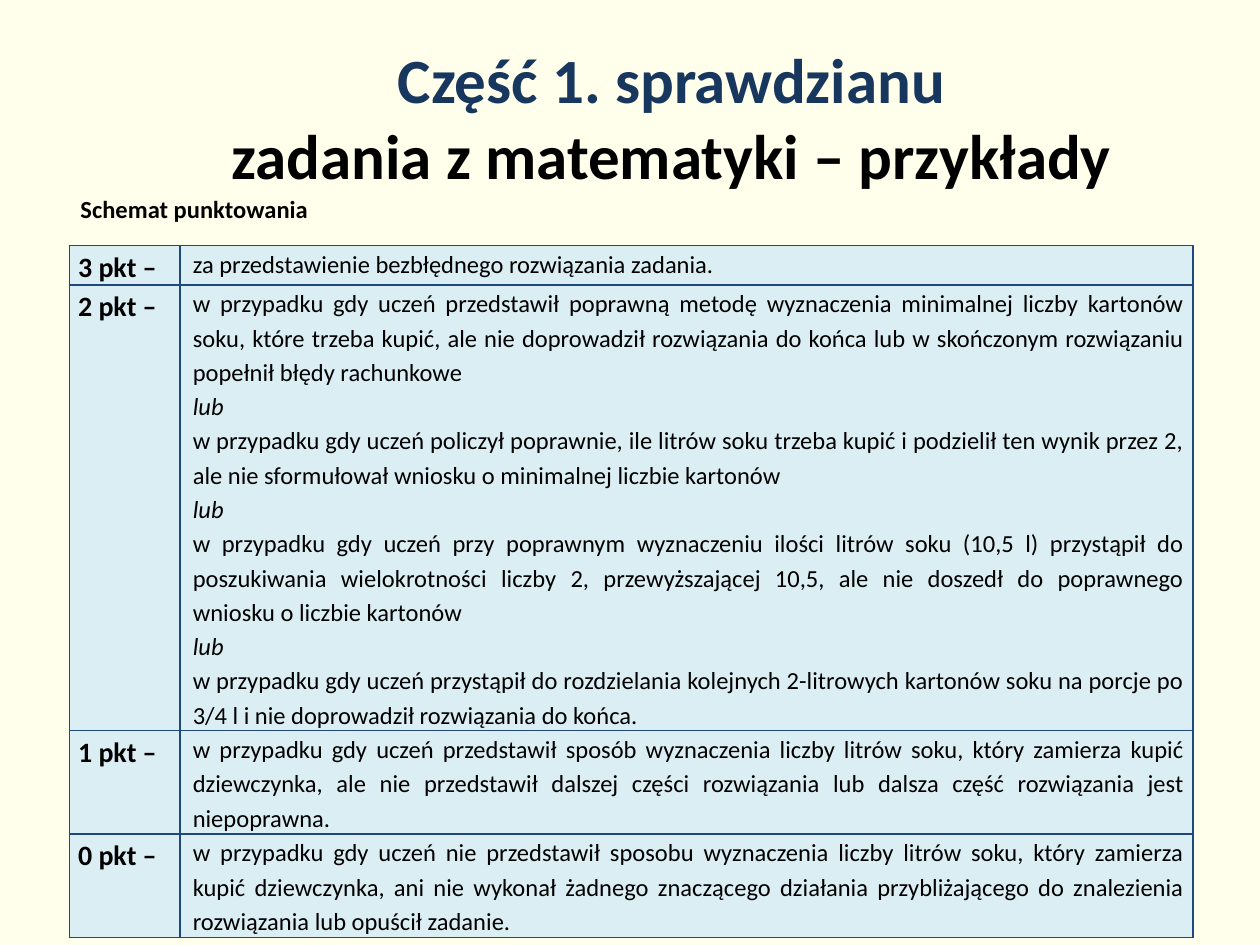
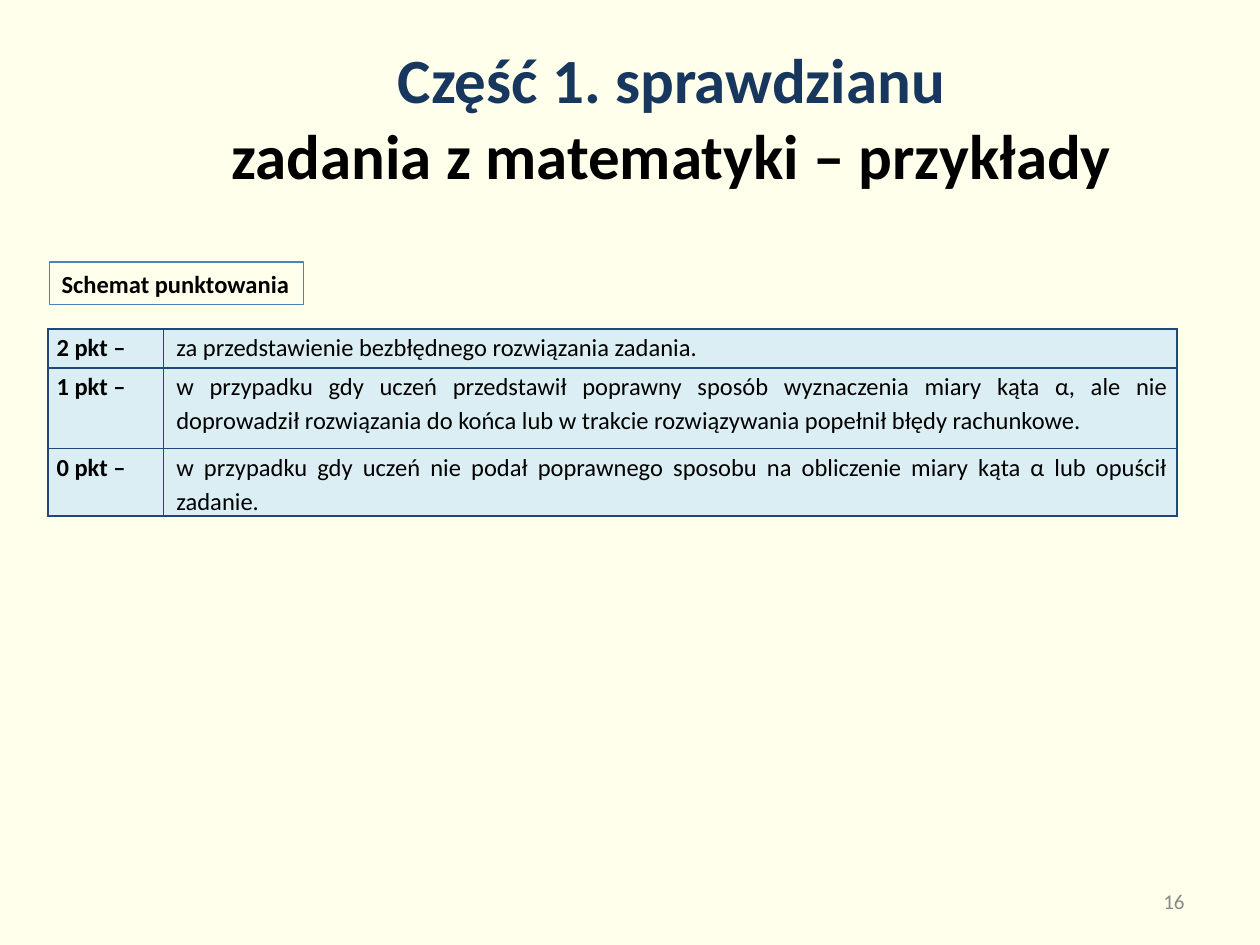
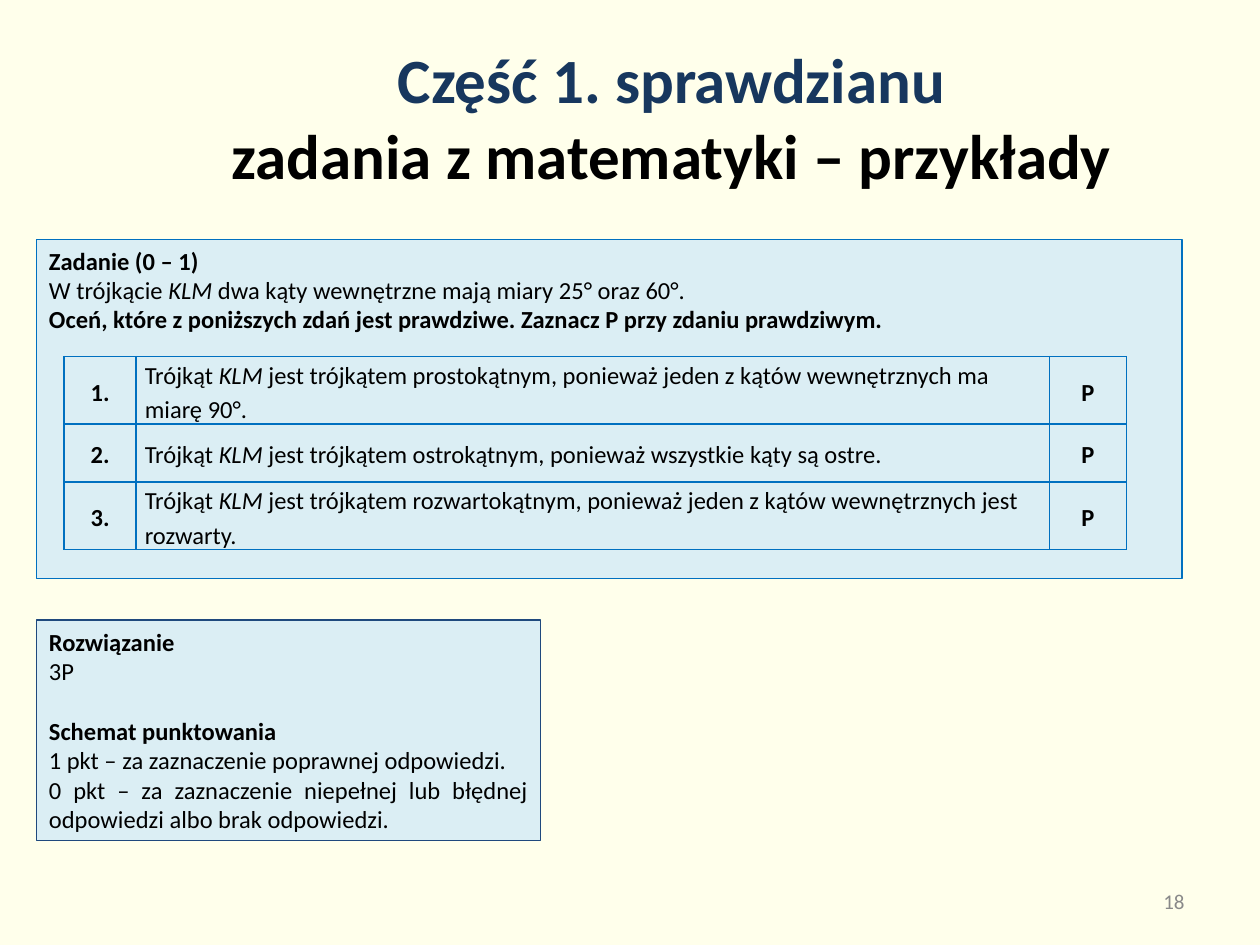
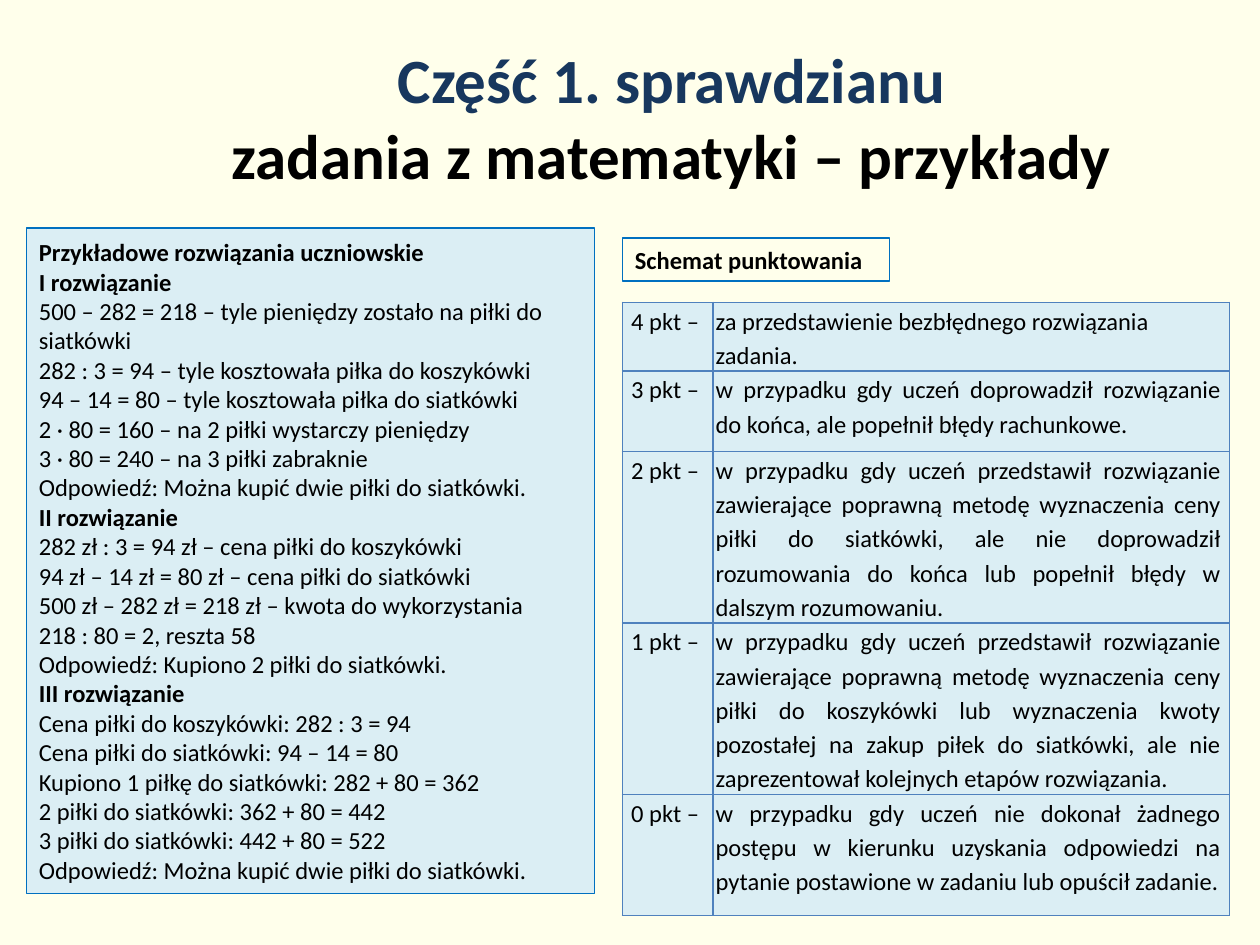
from lxml import etree
from pptx import Presentation
from pptx import util as u
from pptx.dml.color import RGBColor
from pptx.enum import shapes, text
from pptx.oxml import ns

COLORS = {
    "cream": "FFFFEB",
    "ice": "DBEEF4",
    "title": "17375E",
    "ink": "000000",
    "gray": "898989",
    "navy": "1F497D",
    "blue": "0070C0",
    "steel": "4F81BD",
}
FONT = "Calibri"
BODY_SIZE = 14
ALIGN = text.PP_ALIGN
ANCHOR = text.MSO_ANCHOR
TITLE_BOX = (1.23, 0.3, 8.2, 1.25)
NUMBER_BOX = (7.17, 6.95, 2.33, 0.4)
SCORING = "*Schemat punktowania"


def rgb(name):
    """Return a palette colour."""
    return RGBColor.from_string(COLORS[name])


def apply(target, values):
    """Set every attribute in a dict of format values."""
    for name, value in values.items():
        setattr(target, name, value)


def place(shape, box):
    """Move and size a shape to a box in inches."""
    apply(shape, dict(zip(("left", "top", "width", "height"), map(u.Inches, box))))


def add_run(paragraph, words, size=BODY_SIZE, color="ink", bold=False, italic=False):
    """Add one formatted run."""
    run = paragraph.add_run()
    run.text = words
    apply(run.font, {"name": FONT, "size": u.Pt(size), "bold": bold, "italic": italic})
    run.font.color.rgb = rgb(color)


def write(frame, lines, paragraph_format, size=BODY_SIZE, color="ink"):
    """Write lines; a leading * means bold and _words_ are italic."""
    for index, line in enumerate(lines):
        paragraph = frame.add_paragraph() if index else frame.paragraphs[0]
        apply(paragraph, paragraph_format)
        for position, words in enumerate(line.removeprefix("*").split("_")):
            if words:
                add_run(paragraph, words, size, color, line.startswith("*"), position % 2 == 1)


def add_titled_slide(presentation):
    """Add a slide with the shared two-line title."""
    slide = presentation.slides.add_slide(presentation.slide_layouts[5])
    title = slide.shapes.title
    place(title, TITLE_BOX)
    apply(title.text_frame, {
        "auto_size": text.MSO_AUTO_SIZE.NONE,
        "vertical_anchor": ANCHOR.MIDDLE,
        "word_wrap": True,
    })
    paragraph = title.text_frame.paragraphs[0]
    paragraph.alignment = ALIGN.CENTER
    add_run(paragraph, "Część 1. sprawdzianu", 36, "title", True)
    paragraph.add_line_break()
    add_run(paragraph, "zadania z matematyki – przykłady", 36, "ink", True)
    return slide


def add_page_number(slide, number):
    """Add the page number at the lower right."""
    frame = slide.shapes.add_textbox(*map(u.Inches, NUMBER_BOX)).text_frame
    apply(frame, {"word_wrap": True, "vertical_anchor": ANCHOR.MIDDLE})
    write(frame, [str(number)], {"alignment": ALIGN.RIGHT}, 12, "gray")


def add_panel(slide, box, lines, line=None, fill=None, anchor=ANCHOR.MIDDLE, alignment=ALIGN.LEFT):
    """Add a rectangle of text with an optional fill and outline."""
    shape = slide.shapes.add_shape(shapes.MSO_SHAPE.RECTANGLE, *map(u.Inches, box))
    shape.shadow.inherit = False
    if fill:
        shape.fill.solid()
        shape.fill.fore_color.rgb = rgb(fill)
    else:
        shape.fill.background()
    if line:
        shape.line.color.rgb = rgb(line)
        shape.line.width = u.Pt(0.75)
    else:
        shape.line.fill.background()
    apply(shape.text_frame, {"word_wrap": True, "vertical_anchor": anchor})
    write(shape.text_frame, lines, {"alignment": alignment})
    return shape


def add_borders(cell, color):
    """Draw a one-point line on each side of a cell."""
    properties = cell._tc.get_or_add_tcPr()
    for side in ("a:lnL", "a:lnR", "a:lnT", "a:lnB"):
        line = etree.SubElement(properties, ns.qn(side), w=str(u.Pt(1)))
        fill = etree.SubElement(line, ns.qn("a:solidFill"))
        etree.SubElement(fill, ns.qn("a:srgbClr"), val=COLORS[color])


def column(width, alignment, left=0.07, right=0.07, size=BODY_SIZE):
    """Describe a table column."""
    return {"width": width, "alignment": alignment, "left": left, "right": right, "size": size}


def scoring_columns(label_width, text_width, label_align=ALIGN.JUSTIFY, label_size=BODY_SIZE, text_left=0.1):
    """Describe the points column and the criteria column."""
    return [
        column(label_width, label_align, right=0.02, size=label_size),
        column(text_width, ALIGN.JUSTIFY, left=text_left),
    ]


def add_grid(slide, corner, columns, heights, rows, border, fill=None, anchor=ANCHOR.TOP):
    """Add a bordered table from its corner; each cell is a list of lines."""
    size = (sum(part["width"] for part in columns), sum(heights))
    frame = slide.shapes.add_table(len(rows), len(columns), *map(u.Inches, corner + size))
    table = frame.table
    apply(table, {"first_row": False, "horz_banding": False})
    for table_column, part in zip(table.columns, columns):
        table_column.width = u.Inches(part["width"])
    for row_index, (height, row) in enumerate(zip(heights, rows)):
        table.rows[row_index].height = u.Inches(height)
        for column_index, (part, lines) in enumerate(zip(columns, row)):
            cell = table.cell(row_index, column_index)
            apply(cell, {
                "margin_left": u.Inches(part["left"]),
                "margin_right": u.Inches(part["right"]),
                "margin_top": 0,
                "margin_bottom": 0,
                "vertical_anchor": anchor,
            })
            add_borders(cell, border)
            if fill:
                cell.fill.solid()
                cell.fill.fore_color.rgb = rgb(fill)
            else:
                cell.fill.background()
            paragraph_format = {"alignment": part["alignment"], "line_spacing": 1.15}
            write(cell.text_frame, lines, paragraph_format, part["size"])
    return table


def scoring_rows(criteria, mark=""):
    """Label criteria with points, counting down to zero."""
    top = len(criteria) - 1
    return [([f"{mark}{top - index} pkt –"], lines) for index, lines in enumerate(criteria)]


def build_juice_scoring(presentation):
    """Build the scoring slide for the juice task."""
    slide = add_titled_slide(presentation)
    criteria = [
        ["za przedstawienie bezbłędnego rozwiązania zadania."],
        [
            "w przypadku gdy uczeń przedstawił poprawną metodę wyznaczenia minimalnej liczby kartonów "
            "soku, które trzeba kupić, ale nie doprowadził rozwiązania do końca lub w skończonym "
            "rozwiązaniu popełnił błędy rachunkowe",
            "_lub_",
            "w przypadku gdy uczeń policzył poprawnie, ile litrów soku trzeba kupić i podzielił ten "
            "wynik przez 2, ale nie sformułował wniosku o minimalnej liczbie kartonów",
            "_lub_",
            "w przypadku gdy uczeń przy poprawnym wyznaczeniu ilości litrów soku (10,5 l) przystąpił do "
            "poszukiwania wielokrotności liczby 2, przewyższającej 10,5, ale nie doszedł do poprawnego "
            "wniosku o liczbie kartonów",
            "_lub_",
            "w przypadku gdy uczeń przystąpił do rozdzielania kolejnych 2-litrowych kartonów soku na "
            "porcje po 3/4 l i nie doprowadził rozwiązania do końca.",
        ],
        [
            "w przypadku gdy uczeń przedstawił sposób wyznaczenia liczby litrów soku, który zamierza "
            "kupić dziewczynka, ale nie przedstawił dalszej części rozwiązania lub dalsza część "
            "rozwiązania jest niepoprawna."
        ],
        [
            "w przypadku gdy uczeń nie przedstawił sposobu wyznaczenia liczby litrów soku, który "
            "zamierza kupić dziewczynka, ani nie wykonał żadnego znaczącego działania przybliżającego "
            "do znalezienia rozwiązania lub opuścił zadanie."
        ],
    ]
    add_grid(slide, (0.55, 1.95), scoring_columns(0.88, 8.04, label_size=16),
             [0.31, 3.53, 0.82, 0.82], scoring_rows(criteria, "*"), "navy", "ice")
    add_panel(slide, (0.54, 1.49, 2.02, 0.34), [SCORING])


def build_angle_scoring(presentation):
    """Build the scoring slide for the angle task."""
    slide = add_titled_slide(presentation)
    add_page_number(slide, 16)
    add_panel(slide, (0.39, 2.08, 2.02, 0.34), [SCORING], "steel")
    criteria = [
        ["za przedstawienie bezbłędnego rozwiązania zadania."],
        [
            "w przypadku gdy uczeń przedstawił poprawny sposób wyznaczenia miary kąta α, ale nie "
            "doprowadził rozwiązania do końca lub w trakcie rozwiązywania popełnił błędy rachunkowe."
        ],
        [
            "w przypadku gdy uczeń nie podał poprawnego sposobu na obliczenie miary kąta α lub opuścił "
            "zadanie."
        ],
    ]
    add_grid(slide, (0.38, 2.61), scoring_columns(0.92, 8.04),
             [0.31, 0.64, 0.53], scoring_rows(criteria, "*"), "navy", "ice")


def build_triangle_task(presentation):
    """Build the triangle task with its answer and scoring."""
    slide = add_titled_slide(presentation)
    add_page_number(slide, 18)
    add_panel(slide, (0.29, 1.9, 9.09, 2.69), [
        "*Zadanie (0 – 1)",
        "W trójkącie _KLM_ dwa kąty wewnętrzne mają miary 25° oraz 60°.",
        "*Oceń, które z poniższych zdań jest prawdziwe. Zaznacz P przy zdaniu prawdziwym.",
    ], "blue", "ice", ANCHOR.TOP)
    endings = [
        "prostokątnym, ponieważ jeden z kątów wewnętrznych ma miarę 90°.",
        "ostrokątnym, ponieważ wszystkie kąty są ostre.",
        "rozwartokątnym, ponieważ jeden z kątów wewnętrznych jest rozwarty.",
    ]
    rows = [
        ([f"*{number}."], [f"Trójkąt _KLM_ jest trójkątem {ending}"], ["*P"])
        for number, ending in enumerate(endings, 1)
    ]
    columns = [column(0.57, ALIGN.CENTER), column(7.25, ALIGN.LEFT), column(0.61, ALIGN.CENTER)]
    add_grid(slide, (0.51, 2.83), columns, [0.53, 0.46, 0.53], rows, "blue", anchor=ANCHOR.MIDDLE)
    answer = add_panel(slide, (0.29, 4.92, 4, 1.75), [
        "*Rozwiązanie",
        "3P",
        SCORING,
        "1 pkt – za zaznaczenie poprawnej odpowiedzi.",
        "0 pkt – za zaznaczenie niepełnej lub błędnej odpowiedzi albo brak odpowiedzi.",
    ], "navy", "ice", alignment=ALIGN.JUSTIFY)
    answer.text_frame.paragraphs[2].space_before = u.Pt(17)


def build_ball_solutions(presentation):
    """Build the pupils' solutions beside their scoring."""
    slide = add_titled_slide(presentation)
    add_panel(slide, (0.21, 1.81, 4.51, 5.28), [
        "*Przykładowe rozwiązania uczniowskie",
        "*I rozwiązanie",
        "500 – 282 = 218 – tyle pieniędzy zostało na piłki do siatkówki",
        "282 : 3 = 94 – tyle kosztowała piłka do koszykówki",
        "94 – 14 = 80 – tyle kosztowała piłka do siatkówki",
        "2 · 80 = 160 – na 2 piłki wystarczy pieniędzy",
        "3 · 80 = 240 – na 3 piłki zabraknie",
        "Odpowiedź: Można kupić dwie piłki do siatkówki.",
        "*II rozwiązanie",
        "282 zł : 3 = 94 zł – cena piłki do koszykówki",
        "94 zł – 14 zł = 80 zł – cena piłki do siatkówki",
        "500 zł – 282 zł = 218 zł – kwota do wykorzystania",
        "218 : 80 = 2, reszta 58",
        "Odpowiedź: Kupiono 2 piłki do siatkówki.",
        "*III rozwiązanie",
        "Cena piłki do koszykówki: 282 : 3 = 94",
        "Cena piłki do siatkówki: 94 – 14 = 80",
        "Kupiono 1 piłkę do siatkówki: 282 + 80 = 362",
        "2 piłki do siatkówki: 362 + 80 = 442",
        "3 piłki do siatkówki: 442 + 80 = 522",
        "Odpowiedź: Można kupić dwie piłki do siatkówki.",
    ], "blue", "ice")
    criteria = [
        ["za przedstawienie bezbłędnego rozwiązania zadania."],
        [
            "w przypadku gdy uczeń doprowadził rozwiązanie do końca, ale popełnił błędy rachunkowe."
        ],
        [
            "w przypadku gdy uczeń przedstawił rozwiązanie zawierające poprawną metodę wyznaczenia ceny "
            "piłki do siatkówki, ale nie doprowadził rozumowania do końca lub popełnił błędy "
            "w dalszym rozumowaniu."
        ],
        [
            "w przypadku gdy uczeń przedstawił rozwiązanie zawierające poprawną metodę wyznaczenia ceny "
            "piłki do koszykówki lub wyznaczenia kwoty pozostałej na zakup piłek do siatkówki, ale nie "
            "zaprezentował kolejnych etapów rozwiązania."
        ],
        [
            "w przypadku gdy uczeń nie dokonał żadnego postępu w kierunku uzyskania odpowiedzi na "
            "pytanie postawione w zadaniu lub opuścił zadanie."
        ],
    ]
    table = add_grid(slide, (4.94, 2.4), scoring_columns(0.72, 4.1, ALIGN.LEFT, text_left=0.02),
                     [0.54, 0.64, 1.34, 1.34, 0.96], scoring_rows(criteria), "steel", "ice")
    table.cell(0, 1).text_frame.paragraphs[0].alignment = ALIGN.LEFT
    add_panel(slide, (4.94, 1.89, 2.12, 0.34), [SCORING], "blue")


def main():
    """Build and save the presentation."""
    presentation = Presentation()
    apply(presentation, {"slide_width": u.Inches(10), "slide_height": u.Inches(7.5)})
    background = presentation.slide_master.background.fill
    background.solid()
    background.fore_color.rgb = rgb("cream")
    for build in (build_juice_scoring, build_angle_scoring, build_triangle_task, build_ball_solutions):
        build(presentation)
    presentation.save("out.pptx")


if __name__ == "__main__":
    main()
